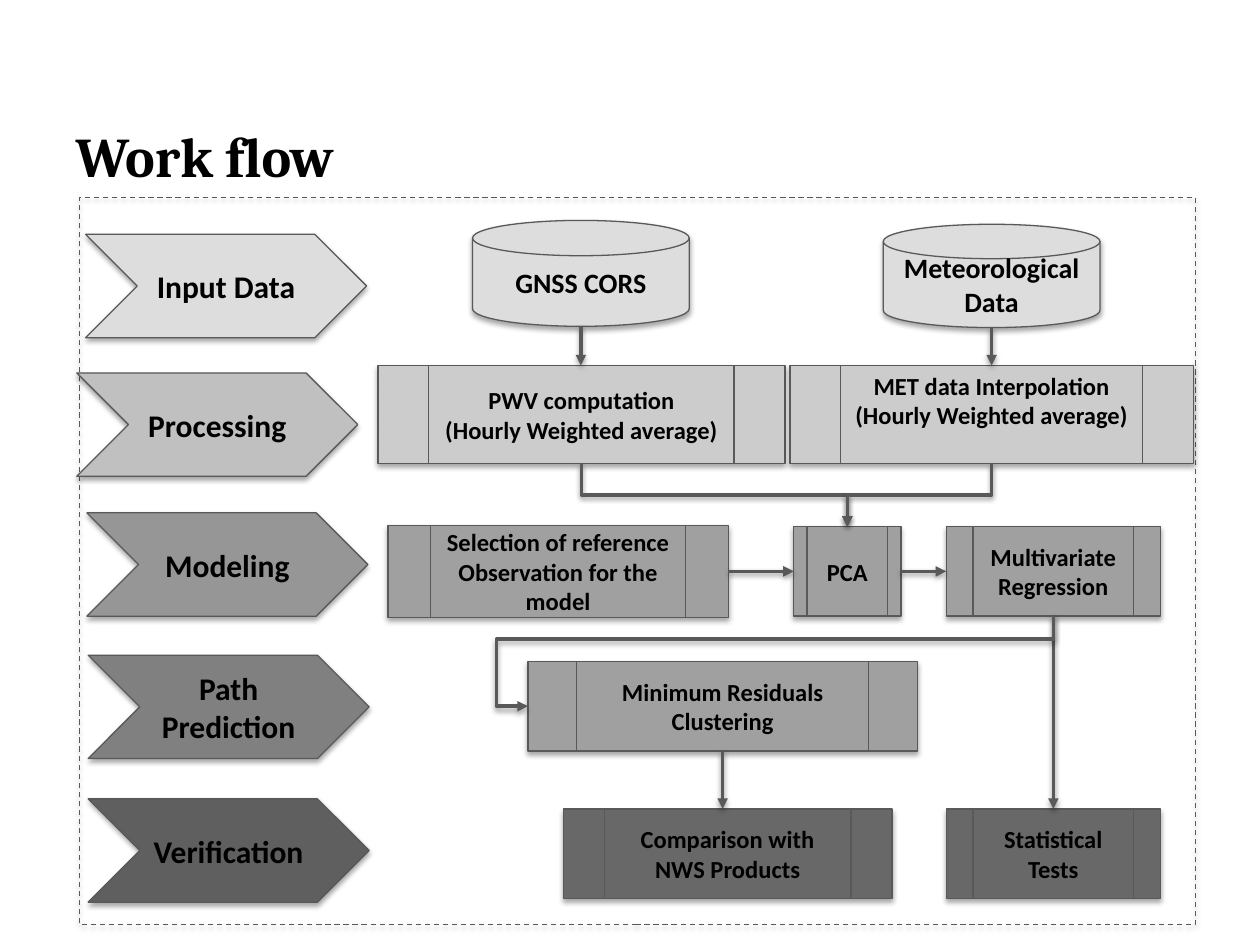
from lxml import etree
from pptx import Presentation
from pptx.dml.color import RGBColor
from pptx.enum.dml import MSO_LINE
from pptx.enum.shapes import MSO_CONNECTOR, MSO_SHAPE
from pptx.enum.text import MSO_ANCHOR, PP_ALIGN
from pptx.oxml.ns import qn
from pptx.util import Inches, Pt

CHEVRON = MSO_SHAPE.CHEVRON
DISK = MSO_SHAPE.FLOWCHART_MAGNETIC_DISK
PROCESS = MSO_SHAPE.FLOWCHART_PREDEFINED_PROCESS
STRAIGHT, ELBOW = MSO_CONNECTOR.STRAIGHT, MSO_CONNECTOR.ELBOW

COLORS = {
    "text": "000000", "line": "595959", "input": "DDDDDD", "stage_processing": "C0C0C0",
    "stage_modeling": "969696", "stage_path": "808080", "stage_verification": "5F5F5F",
    "processing": "CCCCCC", "modeling": "A0A0A0", "verification": "686868",
}

# Content: stage label, left, top, color
STAGE_SIZE = (2.23, 0.82)
STAGES = [
    ("Input Data", 0.68, 1.86, "input"),
    ("Processing", 0.61, 2.96, "stage_processing"),
    ("Modeling", 0.69, 4.07, "stage_modeling"),
    ("Path Prediction", 0.7, 5.2, "stage_path"),
    ("Verification", 0.7, 6.34, "stage_verification"),
]

# Content: key -> kind, text, box (left, top, width, height), color, font size
STEPS = {
    "gnss": (DISK, "GNSS CORS", (3.75, 1.75, 1.72, 0.84), "input", 16),
    "met": (DISK, "Meteorological Data", (7.01, 1.78, 1.72, 0.82), "input", 16),
    "pwv": (PROCESS, "PWV computation\n(Hourly Weighted average)",
            (3, 2.9, 3.23, 0.78), "processing", 14),
    "interpolation": (PROCESS, "MET data Interpolation\n(Hourly Weighted average)",
                      (6.27, 2.9, 3.2, 0.78), "processing", 14),
    "selection": (PROCESS, "Selection of reference Observation for the model",
                  (3.08, 4.17, 2.7, 0.73), "modeling", 14),
    "pca": (PROCESS, "PCA", (6.3, 4.18, 0.85, 0.71), "modeling", 14),
    "regression": (PROCESS, "Multivariate Regression",
                   (7.51, 4.18, 1.7, 0.71), "modeling", 14),
    "clustering": (PROCESS, "Minimum Residuals Clustering",
                   (4.19, 5.25, 3.09, 0.71), "modeling", 14),
    "comparison": (PROCESS, "Comparison with NWS Products",
                   (4.47, 6.42, 2.61, 0.71), "verification", 14),
    "tests": (PROCESS, "Statistical Tests", (7.51, 6.42, 1.7, 0.71), "verification", 14),
}
DOWN_ARROWS = [("gnss", "pwv"), ("met", "interpolation"),
               ("clustering", "comparison"), ("regression", "tests")]
RIGHT_ARROWS = [("selection", "pca"), ("pca", "regression")]
# From, to, side of the target, preset, adjustments
ELBOWS = [
    ("pwv", "pca", "top", "bentConnector3", [0.5]),
    ("interpolation", "pca", "top", "bentConnector3", [0.5]),
    ("regression", "clustering", "left", "bentConnector4", [0.255, 1.06]),
]


def rgb(name):
    return RGBColor.from_string(COLORS[name])


def add_shadow(shape, distance, opacity):
    properties = shape._element.spPr
    for old in properties.findall(qn("a:effectLst")):
        properties.remove(old)
    effects = etree.SubElement(properties, qn("a:effectLst"))
    shadow = etree.SubElement(effects, qn("a:outerShdw"), blurRad=str(Pt(3.1)),
                              dist=str(Pt(distance)), dir="5400000", rotWithShape="0")
    color = etree.SubElement(shadow, qn("a:srgbClr"), val=COLORS["text"])
    etree.SubElement(color, qn("a:alpha"), val=str(opacity * 1000))


def set_font(paragraph, size, name="Calibri"):
    formats = {"size": Pt(size), "name": name, "bold": True}
    for attribute, value in formats.items():
        setattr(paragraph.font, attribute, value)
    paragraph.font.color.rgb = rgb("text")


def add_box(slide, kind, box, fill=None, text="", size=14):
    shape = slide.shapes.add_shape(kind, *map(Inches, box))
    shape.line.color.rgb = rgb("line")
    shape.line.width = Pt(0.75)
    if fill:
        shape.fill.solid()
        shape.fill.fore_color.rgb = rgb(fill)
    else:
        shape.fill.background()
    add_shadow(shape, 1.8, 35)
    frame = shape.text_frame
    frame.word_wrap = True
    frame.vertical_anchor = MSO_ANCHOR.MIDDLE
    if text:
        frame.text = text
        for paragraph in frame.paragraphs:
            paragraph.alignment = PP_ALIGN.CENTER
            set_font(paragraph, size)
    return shape


def anchor(key, side):
    left, top, width, height = STEPS[key][2]
    return {"top": (left + width / 2, top), "bottom": (left + width / 2, top + height),
            "left": (left, top + height / 2), "right": (left + width, top + height / 2)}[side]


def add_arrow(slide, kind, start, end):
    connector = slide.shapes.add_connector(kind, *map(Inches, (*start, *end)))
    connector.line.color.rgb = rgb("line")
    connector.line.width = Pt(2)
    etree.SubElement(connector.line._get_or_add_ln(), qn("a:tailEnd"), type="triangle")
    add_shadow(connector, 1.6, 38)
    return connector


def add_elbow(slide, start, end, preset, adjustments):
    """Elbow that leaves downwards: a turned connector about the same centre."""
    (x1, y1), (x2, y2) = start, end
    center_x, center_y = (x1 + x2) / 2, (y1 + y2) / 2
    half_width, half_height = abs(y2 - y1) / 2, abs(x2 - x1) / 2
    to_right = x2 > x1
    flip = -1 if to_right else 1
    connector = add_arrow(slide, ELBOW,
                          (center_x - flip * half_width, center_y - half_height),
                          (center_x + flip * half_width, center_y + half_height))
    properties = connector._element.spPr
    properties.find(qn("a:xfrm")).set("rot", str((270 if to_right else 90) * 60000))
    geometry = properties.find(qn("a:prstGeom"))
    geometry.set("prst", preset)
    guides = geometry.find(qn("a:avLst"))
    for number, value in enumerate(adjustments, 1):
        etree.SubElement(guides, qn("a:gd"), name=f"adj{number}",
                         fmla=f"val {round(value * 100000)}")


def main():
    presentation = Presentation()
    presentation.slide_width, presentation.slide_height = Inches(10), Inches(7.5)
    slide = presentation.slides.add_slide(presentation.slide_layouts[5])

    # Title
    title = slide.shapes.title
    title.left, title.top, title.width, title.height = map(Inches, (0.5, 0.61, 9, 1.25))
    title.text_frame.text = "Work flow"
    title.text_frame.vertical_anchor = MSO_ANCHOR.MIDDLE
    heading = title.text_frame.paragraphs[0]
    heading.alignment = PP_ALIGN.LEFT
    set_font(heading, 32, "Cambria")

    # Dashed frame
    frame = add_box(slide, MSO_SHAPE.RECTANGLE, (0.63, 1.57, 8.86, 5.77))
    frame.line.dash_style = MSO_LINE.DASH

    # Stages and steps
    for label, left, top, color in STAGES:
        add_box(slide, CHEVRON, (left, top, *STAGE_SIZE), color, label, 18)
    shapes = {key: add_box(slide, kind, box, color, text, size)
              for key, (kind, text, box, color, size) in STEPS.items()}
    shapes["interpolation"].text_frame.margin_bottom = Inches(0.28)

    # Arrows
    for source, target in DOWN_ARROWS:
        x, y = anchor(source, "bottom")
        add_arrow(slide, STRAIGHT, (x, y), (x, anchor(target, "top")[1]))
    for source, target in RIGHT_ARROWS:
        add_arrow(slide, STRAIGHT, anchor(source, "right"), anchor(target, "left"))
    for source, target, side, preset, adjustments in ELBOWS:
        add_elbow(slide, anchor(source, "bottom"), anchor(target, side), preset, adjustments)

    presentation.save("out.pptx")


if __name__ == "__main__":
    main()
